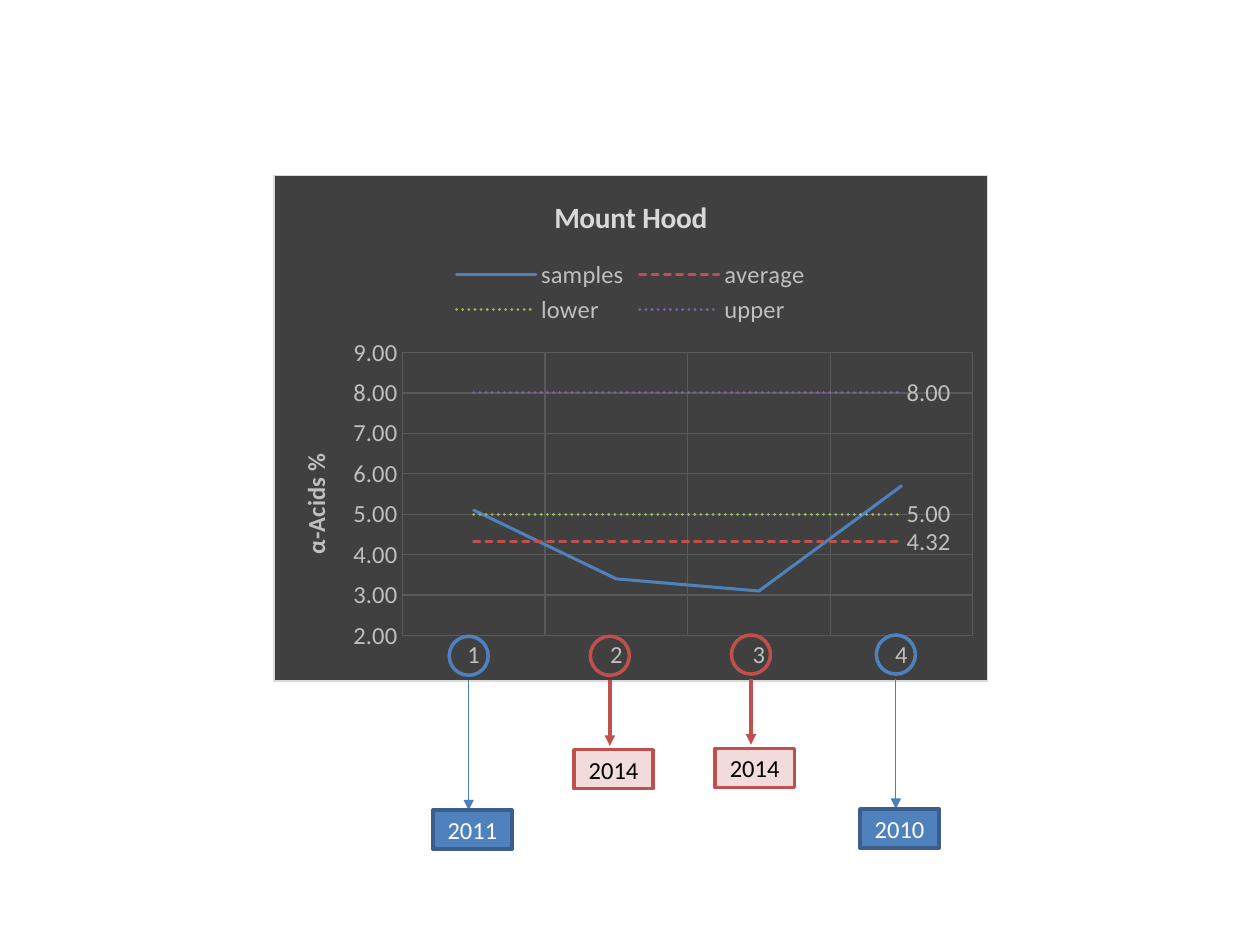
from dataclasses import dataclass

from lxml import etree
from pptx import Presentation
from pptx.chart.data import CategoryChartData
from pptx.dml.color import RGBColor
from pptx.enum import chart as ch, dml, shapes, text
from pptx.oxml import ns
from pptx.util import Inches, Pt


@dataclass(frozen=True)
class Theme:
    font: str = "Calibri"
    body: int = 14
    title: float = 16.8
    panel: str = "404040"
    panel_edge: str = "D9D9D9"
    grid: str = "595959"
    muted: str = "BFBFBF"
    blue: str = "4F81BD"
    blue_edge: str = "3A5F8C"
    blue_arrow: str = "4B7EBC"
    red: str = "C0504D"
    pink: str = "F2DCDB"
    green: str = "9BBB59"
    purple: str = "8064A2"
    white: str = "FFFFFF"
    black: str = "000000"


THEME = Theme()
DASH, DOT = dml.MSO_LINE.SQUARE_DOT, dml.MSO_LINE.ROUND_DOT
SERIES = [
    ("samples", [5.1, 3.4, 3.1, 5.7], THEME.blue, None),
    ("average", [4.32] * 4, THEME.red, DASH),
    ("lower", [5] * 4, THEME.green, DOT),
    ("upper", [8] * 4, THEME.purple, DOT),
]


@dataclass(frozen=True)
class MarkerStyle:
    ring: str
    fill: str
    edge: str
    ink: str
    arrow: str
    weight: float
    drop: float  # from the ring's top to the year box
    gap: float  # between the arrow tip and the year box


IN_RANGE = MarkerStyle(THEME.blue, THEME.blue, THEME.blue_edge, THEME.white,
                       THEME.blue_arrow, 0.75, 1.38, 0)
LOW = MarkerStyle(THEME.red, THEME.pink, THEME.red, THEME.black,
                  THEME.red, 2, 0.9, 0.03)
BOX_SHIFT = 0.03  # year boxes sit a little right of their arrows
# centre x, ring top, year, style
MARKERS = [
    (3.72, 5.05, "2011", IN_RANGE),
    (7.11, 5.04, "2010", IN_RANGE),
    (4.84, 5.05, "2014", LOW),
    (5.96, 5.04, "2014", LOW),
]


def set_font(font, size, color, bold=False):
    font.name, font.size, font.bold = THEME.font, Pt(size), bold
    font.color.rgb = RGBColor.from_string(color)


def set_line(line, color, width):
    line.color.rgb = RGBColor.from_string(color)
    line.width = Pt(width)


def set_fill(fill, color):
    fill.solid()
    fill.fore_color.rgb = RGBColor.from_string(color)


def add_title(owner, wording, size, color):
    span = owner.text_frame.paragraphs[0].add_run()
    span.text = wording
    set_font(span.font, size, color, bold=True)


def style_axis(axis):
    axis.has_major_gridlines = True
    set_line(axis.major_gridlines.format.line, THEME.grid, 0.75)
    axis.major_tick_mark = axis.minor_tick_mark = ch.XL_TICK_MARK.NONE
    axis.format.line.fill.background()
    set_font(axis.tick_labels.font, THEME.body, THEME.muted)


def style_series(series, color, dash):
    series.smooth = False
    series.marker.style = ch.XL_MARKER_STYLE.NONE
    line = series.format.line
    set_line(line, color, 1.75)
    line._get_or_add_ln().set("cap", "rnd")
    if dash is None:
        return
    line.dash_style = dash
    label = series.points[3].data_label
    set_font(label.font, THEME.body, THEME.muted)
    label.position = ch.XL_LABEL_POSITION.RIGHT


def style_panel(chart):
    """Fill and outline the whole chart area."""
    props = etree.Element(ns.qn("c:spPr"))
    fill = etree.SubElement(props, ns.qn("a:solidFill"))
    etree.SubElement(fill, ns.qn("a:srgbClr"), val=THEME.panel)
    line = etree.SubElement(props, ns.qn("a:ln"), w=str(Pt(0.75)))
    fill = etree.SubElement(line, ns.qn("a:solidFill"))
    etree.SubElement(fill, ns.qn("a:srgbClr"), val=THEME.panel_edge)
    chart.element.find(ns.qn("c:chart")).addnext(props)


def place_plot(chart, x, y, w, h):
    """Fix the inner plot area, in fractions of the chart."""
    plot_area = chart.element.find(".//" + ns.qn("c:plotArea"))
    for old in plot_area.findall(ns.qn("c:layout")):
        plot_area.remove(old)
    layout = etree.Element(ns.qn("c:layout"))
    manual = etree.SubElement(layout, ns.qn("c:manualLayout"))
    settings = [("layoutTarget", "inner"), ("xMode", "edge"), ("yMode", "edge"),
                ("x", x), ("y", y), ("w", w), ("h", h)]
    for tag, value in settings:
        etree.SubElement(manual, ns.qn("c:" + tag), val=str(value))
    plot_area.insert(0, layout)


def acid_chart(page, left, top, width, height):
    data = CategoryChartData(number_format="0.00")
    data.categories = ["1", "2", "3", "4"]
    for name, values, _, _ in SERIES:
        data.add_series(name, values)
    chart = page.shapes.add_chart(
        ch.XL_CHART_TYPE.LINE, Inches(left), Inches(top),
        Inches(width), Inches(height), data).chart
    set_font(chart.font, THEME.body, THEME.muted)
    chart.has_title = True
    add_title(chart.chart_title, "Mount Hood", THEME.title, THEME.panel_edge)
    chart.has_legend = True
    chart.legend.position = ch.XL_LEGEND_POSITION.TOP
    chart.legend.include_in_layout = False
    set_font(chart.legend.font, THEME.body, THEME.muted)

    style_axis(chart.category_axis)
    acids = chart.value_axis
    style_axis(acids)
    acids.minimum_scale, acids.maximum_scale, acids.major_unit = 2, 9, 1
    acids.tick_labels.number_format = "0.00"
    acids.tick_labels.number_format_is_linked = False
    acids.has_title = True
    add_title(acids.axis_title, "α-Acids %", THEME.body, THEME.muted)

    chart.plots[0].vary_by_categories = False
    for series, (_, _, color, dash) in zip(chart.plots[0].series, SERIES):
        style_series(series, color, dash)
    place_plot(chart, 0.18, 0.35, 0.8, 0.56)
    style_panel(chart)


def add_outline(group, preset, center, top, width, height):
    shape = group.shapes.add_shape(
        preset, Inches(center - width / 2), Inches(top),
        Inches(width), Inches(height))
    shape.shadow.inherit = False
    return shape


def year_marker(group, center, top, year, style):
    """Ring round a sample number, with an arrow down to its year."""
    ring = add_outline(group, shapes.MSO_SHAPE.OVAL, center, top, 0.31, 0.31)
    ring.fill.background()
    set_line(ring.line, style.ring, 2)

    box_top = top + style.drop
    arrow = group.shapes.add_connector(
        shapes.MSO_CONNECTOR.STRAIGHT, Inches(center), Inches(top + 0.35),
        Inches(center), Inches(box_top - style.gap))
    set_line(arrow.line, style.arrow, style.weight)
    etree.SubElement(arrow.line._get_or_add_ln(), ns.qn("a:tailEnd"), type="triangle")
    etree.SubElement(arrow._element.spPr, ns.qn("a:effectLst"))

    box = add_outline(group, shapes.MSO_SHAPE.RECTANGLE,
                      center + BOX_SHIFT, box_top, 0.63, 0.31)
    set_fill(box.fill, style.fill)
    set_line(box.line, style.edge, 2)
    frame = box.text_frame
    frame.vertical_anchor = text.MSO_ANCHOR.MIDDLE
    para = frame.paragraphs[0]
    para.alignment = text.PP_ALIGN.CENTER
    span = para.add_run()
    span.text = year
    set_font(span.font, THEME.body, style.ink)


def main():
    deck = Presentation()
    deck.slide_width, deck.slide_height = Inches(10), Inches(7.5)
    page = deck.slides.add_slide(deck.slide_layouts[6])
    acid_chart(page, 2.17, 1.39, 5.67, 4.02)
    group = page.shapes.add_group_shape()
    for marker in MARKERS:
        year_marker(group, *marker)
    deck.save("out.pptx")


if __name__ == "__main__":
    main()
